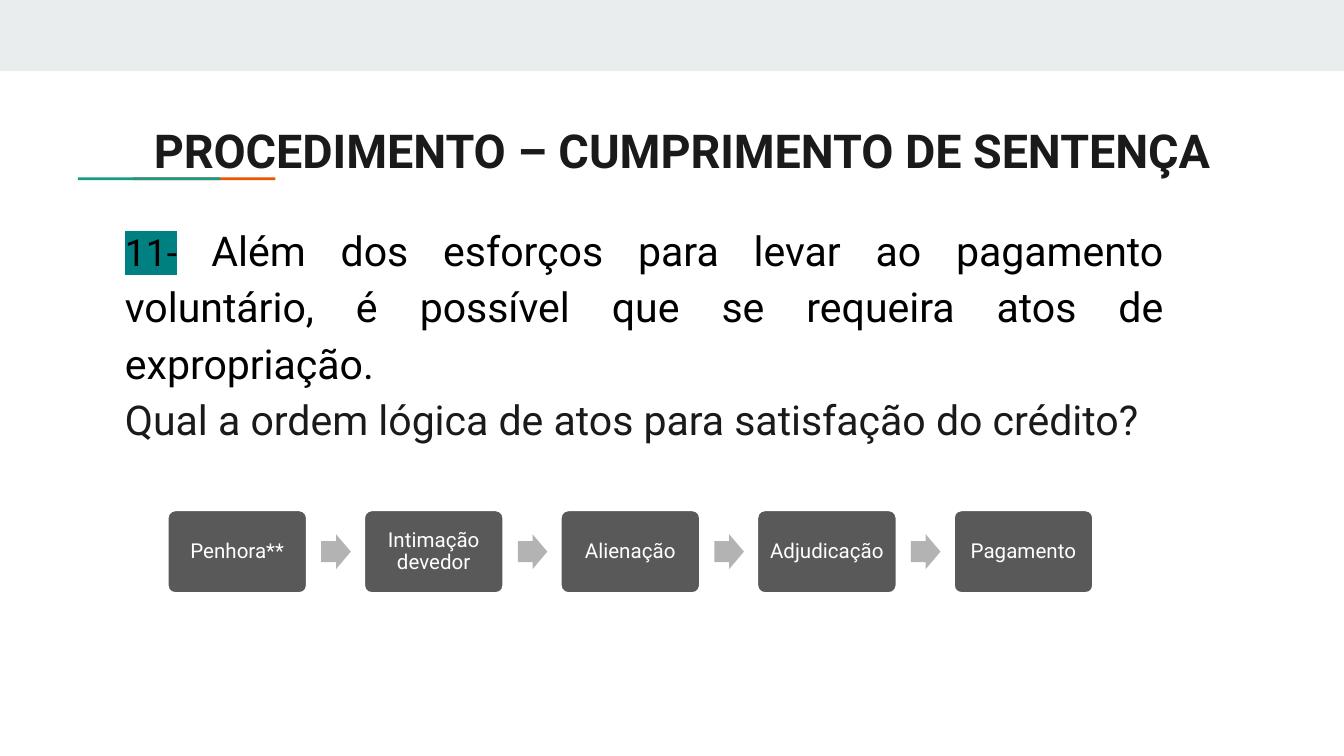
from lxml.etree import SubElement
from pptx import Presentation
from pptx.dml.color import RGBColor
from pptx.enum.shapes import MSO_SHAPE as Preset
from pptx.enum.text import MSO_ANCHOR as Anchor, MSO_AUTO_SIZE as AutoSize, PP_ALIGN as Align
from pptx.oxml.ns import qn
from pptx.util import Inches, Pt

FONT = "Roboto"
COLORS = {
    "band": "E9EDEE", "orange": "EB5600", "teal": "1A9988", "black": "000000",
    "ink": "1A1A1A", "marker": "008080", "step": "595959", "arrow": "B3B3B3",
    "white": "FFFFFF",
}
STEPS = ["Penhora**", "Intimação devedor", "Alienação", "Adjudicação", "Pagamento"]


def color(name):
    """Return the named palette colour."""
    return RGBColor.from_string(COLORS[name])


def add_filled(slide, preset, box, fill):
    """Add a flat preset shape without outline to the box."""
    shape = slide.shapes.add_shape(preset, *map(Inches, box))
    shape.shadow.inherit = False
    shape.fill.solid()
    shape.fill.fore_color.rgb = color(fill)
    shape.line.fill.background()
    return shape


def format_run(run, size, fill, bold=False):
    """Set the font of a run."""
    run.font.name = FONT
    run.font.size = Pt(size)
    run.font.bold = bold
    run.font.color.rgb = color(fill)


def highlight(run, fill):
    """Mark a coloured run with a background colour."""
    properties = run.font._element
    marker = SubElement(properties, qn("a:highlight"))
    SubElement(marker, qn("a:srgbClr"), val=COLORS[fill])
    properties.find(qn("a:solidFill")).addnext(marker)


def place_frame(shape, box, margin, anchor):
    """Move a shape to the box and return its prepared text frame."""
    shape.left, shape.top, shape.width, shape.height = map(Inches, box)
    frame = shape.text_frame
    frame.word_wrap = True
    frame.auto_size = AutoSize.NONE
    frame.vertical_anchor = anchor
    frame.margin_left = frame.margin_right = Inches(margin)
    frame.margin_top = frame.margin_bottom = Inches(margin)
    return frame


def add_decoration(slide, box):
    """Draw the top band and the two-coloured rule below it."""
    left, top, width, height = box
    add_filled(slide, Preset.RECTANGLE, box, "band")
    for offset, fill in ((0.99, "orange"), (0.58, "teal")):
        rule = (left + offset, top + height + 0.79, 1.06, 0.02)
        add_filled(slide, Preset.RECTANGLE, rule, fill)


def fill_title(slide, box):
    """Fill the title placeholder."""
    frame = place_frame(slide.shapes.title, box, 0.1, Anchor.TOP)
    frame.text = "PROCEDIMENTO – CUMPRIMENTO DE SENTENÇA"
    paragraph = frame.paragraphs[0]
    paragraph.alignment = Align.CENTER
    format_run(paragraph.runs[0], 25, "ink", bold=True)


def fill_body(slide, box):
    """Fill the body placeholder with the statement and the question."""
    frame = place_frame(slide.placeholders[1], box, 0.1, Anchor.TOP)
    paragraphs = [
        [("11-", 20, "black"), (" ", 20, "black"),
         ("Além dos esforços para levar ao pagamento voluntário, é possível "
          "que se requeira atos de expropriação.", 22, "black")],
        [("Qual a ordem lógica de atos para satisfação do crédito?", 22, "ink")],
    ]
    for index, parts in enumerate(paragraphs):
        paragraph = frame.add_paragraph() if index else frame.paragraphs[0]
        paragraph.alignment = Align.JUSTIFY
        paragraph.line_spacing = 1.15
        paragraph.space_before = paragraph.space_after = Pt(0)
        properties = paragraph._p.get_or_add_pPr()
        properties.set("marL", str(Inches(0.16)))
        properties.set("indent", "0")
        SubElement(properties, qn("a:buNone"))
        for text, size, fill in parts:
            run = paragraph.add_run()
            run.text = text
            format_run(run, size, fill)
    highlight(frame.paragraphs[0].runs[0], "marker")


def add_step(slide, box, label):
    """Add one labelled step of the process."""
    shape = add_filled(slide, Preset.ROUNDED_RECTANGLE, box, "step")
    shape.adjustments[0] = 0.1
    shape.line.color.rgb = color("white")
    shape.line.width = Pt(2)
    frame = place_frame(shape, box, 0.05, Anchor.MIDDLE)
    frame.text = label
    paragraph = frame.paragraphs[0]
    paragraph.alignment = Align.CENTER
    paragraph.line_spacing = 0.9
    format_run(paragraph.runs[0], 11, "white")


def add_process(slide, box):
    """Spread the steps over the box, with an arrow in each gap."""
    left, top, width, height = box
    step_width, arrow_width, arrow_height = 1.05, 0.22, 0.26
    pitch = (width - step_width) / (len(STEPS) - 1)
    for index, label in enumerate(STEPS):
        step_left = left + index * pitch
        add_step(slide, (step_left, top, step_width, height), label)
        if index < len(STEPS) - 1:
            arrow_box = (step_left + step_width + 0.1, top + (height - arrow_height) / 2,
                         arrow_width, arrow_height)
            arrow = add_filled(slide, Preset.RIGHT_ARROW, arrow_box, "arrow")
            arrow.adjustments[0] = 0.6
            arrow.adjustments[1] = 0.5


def main():
    """Build and save the presentation."""
    presentation = Presentation()
    presentation.slide_width = Inches(10)
    presentation.slide_height = Inches(10 * 9 / 16)
    slide = presentation.slides.add_slide(presentation.slide_layouts[1])
    add_decoration(slide, (0, 0, 10, 0.53))
    fill_body(slide, (0.67, 1.52, 8.09, 3.58))
    fill_title(slide, (0.87, 0.81, 8.41, 0.59))
    for placeholder in (slide.placeholders[1], slide.shapes.title):
        slide.shapes._spTree.append(placeholder._element)
    add_process(slide, (1.24, 3.79, 6.9, 0.63))
    presentation.save("out.pptx")


if __name__ == "__main__":
    main()
